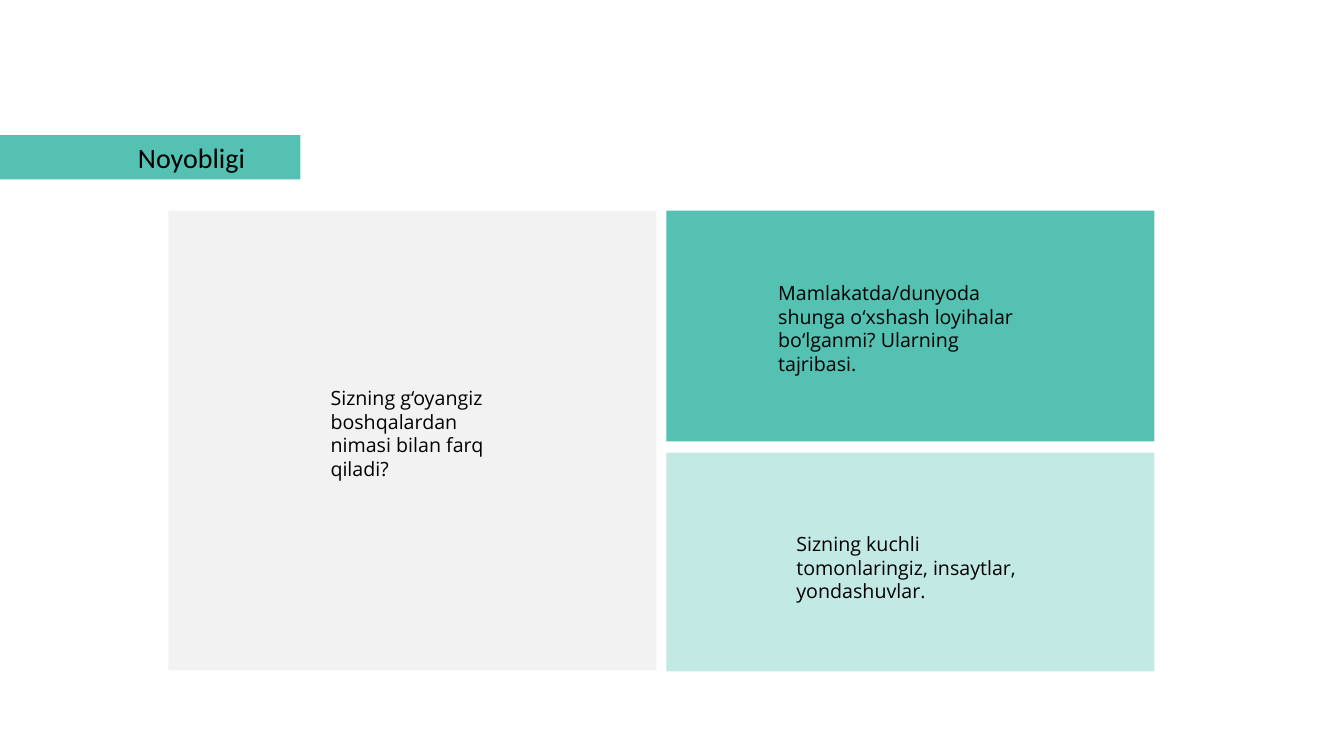
from dataclasses import dataclass

from lxml import etree
from pptx import Presentation
from pptx.dml.color import RGBColor
from pptx.enum.shapes import MSO_SHAPE
from pptx.enum.text import MSO_AUTO_SIZE, PP_ALIGN
from pptx.oxml.ns import qn
from pptx.slide import Slide
from pptx.util import Inches, Pt

RECTANGLE = MSO_SHAPE.RECTANGLE
GROW = MSO_AUTO_SIZE.SHAPE_TO_FIT_TEXT
LEFT, CENTER = PP_ALIGN.LEFT, PP_ALIGN.CENTER

COLORS = {"teal": "54C1B2", "grey": "F2F2F2", "text": "000000"}


@dataclass(frozen=True)
class Box:
    left: float
    top: float
    width: float
    height: float

    def inches(self) -> list[Inches]:
        return [Inches(v) for v in (self.left, self.top, self.width, self.height)]


@dataclass(frozen=True)
class Label:
    text: str
    box: Box
    size: int = 14
    font: str = "Open Sans"
    align: PP_ALIGN = LEFT
    wrap: bool = True


@dataclass(frozen=True)
class Panel:
    box: Box
    color: str
    label: Label
    opacity: int = 100


GRID_LEFT, GRID_TOP = 1.67, 2.09
PANEL_WIDTH, GAP = 4.84, 0.1
GRID_HEIGHT = 4.56
RIGHT_COLUMN = GRID_LEFT + PANEL_WIDTH + GAP
LOWER_TOP, LOWER_HEIGHT = 4.49, 2.17

PANELS = [
    Panel(
        Box(RIGHT_COLUMN, GRID_TOP, PANEL_WIDTH, 2.29),
        "teal",
        Label(
            "Mamlakatda/dunyoda shunga o‘xshash loyihalar bo‘lganmi? Ularning tajribasi.",
            Box(7.62, 2.74, 2.67, 1.04),
        ),
    ),
    Panel(
        Box(RIGHT_COLUMN, LOWER_TOP, PANEL_WIDTH, LOWER_HEIGHT),
        "teal",
        Label(
            "Sizning kuchli tomonlaringiz, insaytlar, yondashuvlar.",
            Box(7.8, 5.23, 2.49, 0.81),
        ),
        opacity=35,
    ),
    Panel(
        Box(GRID_LEFT, GRID_TOP, PANEL_WIDTH, GRID_HEIGHT),
        "grey",
        Label(
            "Sizning g‘oyangiz boshqalardan nimasi bilan farq qiladi?",
            Box(3.18, 3.78, 1.95, 1.04),
        ),
    ),
    Panel(
        Box(0, 1.34, 2.98, 0.44),
        "teal",
        Label("Noyobligi", Box(0.93, 1.34, 1.94, 0.44), 20, "Calibri", CENTER, False),
    ),
]


def add_label(slide: Slide, label: Label) -> None:
    frame = slide.shapes.add_textbox(*label.box.inches()).text_frame
    frame.word_wrap = label.wrap
    frame.auto_size = GROW
    paragraph = frame.paragraphs[0]
    paragraph.alignment = label.align
    run = paragraph.add_run()
    run.text = label.text
    run.font.size = Pt(label.size)
    run.font.name = label.font
    run.font.color.rgb = RGBColor.from_string(COLORS["text"])


def add_panel(slide: Slide, panel: Panel) -> None:
    """Draw a borderless rectangle and its label."""
    rectangle = slide.shapes.add_shape(RECTANGLE, *panel.box.inches())
    rectangle.shadow.inherit = False
    rectangle.line.fill.background()
    rectangle.fill.solid()
    rectangle.fill.fore_color.rgb = RGBColor.from_string(COLORS[panel.color])
    if panel.opacity < 100:
        color = rectangle.fill._xPr.find(f"{qn('a:solidFill')}/{qn('a:srgbClr')}")
        etree.SubElement(color, qn("a:alpha"), val=str(panel.opacity * 1000))
    add_label(slide, panel.label)


def main() -> None:
    presentation = Presentation()
    presentation.slide_width = Inches(13.33)
    presentation.slide_height = Inches(7.5)
    slide = presentation.slides.add_slide(presentation.slide_layouts[6])
    for panel in PANELS:
        add_panel(slide, panel)
    presentation.save("out.pptx")


if __name__ == "__main__":
    main()
